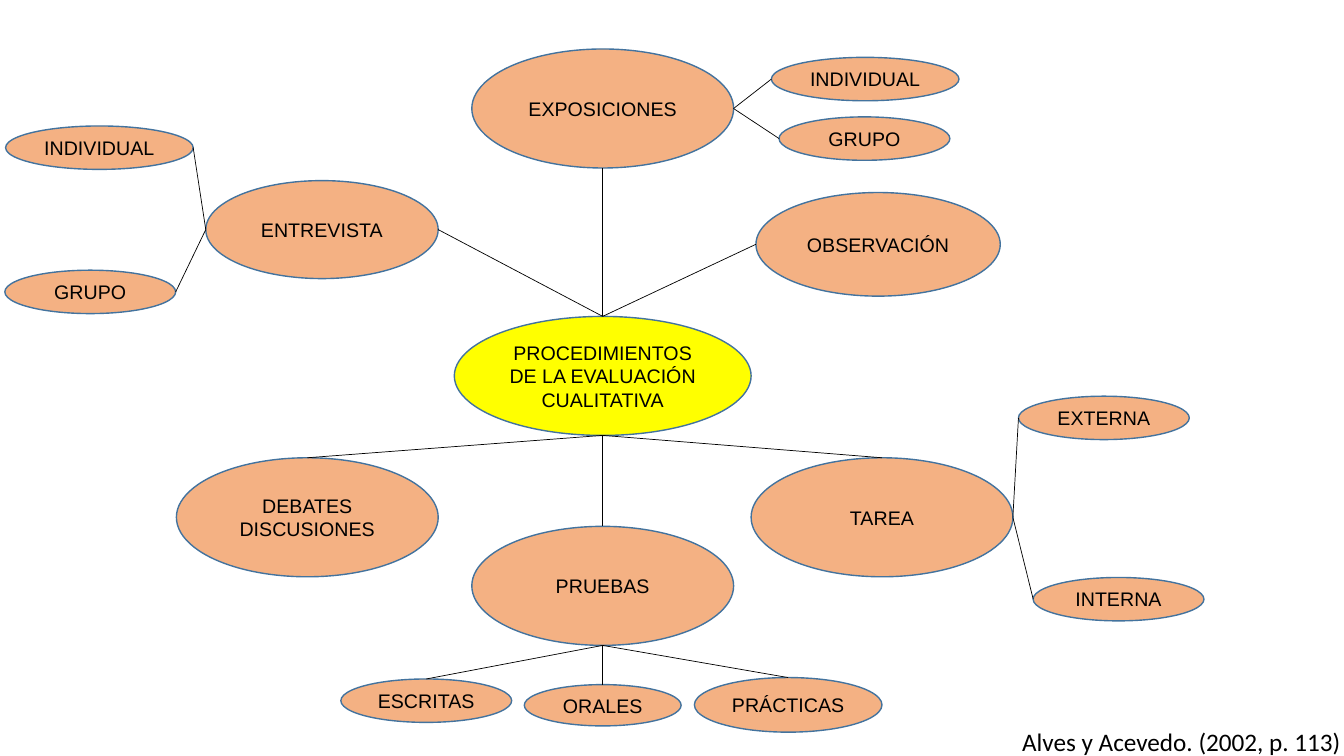
"""Concept map of the procedures of qualitative evaluation."""
from pptx import Presentation
from pptx.dml.color import RGBColor
from pptx.enum import shapes, text
from pptx.oxml import ns, xmlchemy
from pptx.util import Pt

ORANGE = RGBColor(0xF4, 0xB1, 0x83)
YELLOW = RGBColor(0xFF, 0xFF, 0x00)
BLUE = RGBColor(0x43, 0x73, 0x9E)
BLACK = RGBColor(0x00, 0x00, 0x00)

SIDES = {"top": (0.5, 0), "bottom": (0.5, 1), "left": (0, 0.5), "right": (1, 0.5)}
OPPOSITE = {"top": "bottom", "bottom": "top", "left": "right", "right": "left"}

CENTRE = ("PROCEDIMIENTOS DE LA EVALUACIÓN CUALITATIVA", 324.5, 226, 212, 85)

# label, left, top, width, height, side of the centre, own side, side of the leaves, leaves
BRANCHES = [
    (("ENTREVISTA", 147, 129, 166, 70), "top", "right", "left", [
        ("INDIVIDUAL", 4, 90, 134, 31),
        ("GRUPO", 3.5, 193, 122, 31)]),
    (("EXPOSICIONES", 337, 35, 187, 85), "top", "bottom", "right", [
        ("INDIVIDUAL", 551, 41, 134, 31),
        ("GRUPO", 556.5, 83.5, 122, 31)]),
    (("OBSERVACIÓN", 540, 137.5, 174.5, 74), "top", "left", "right", []),
    (("DEBATES\nDISCUSIONES", 126, 327, 187, 85), "bottom", "top", "left", []),
    (("PRUEBAS", 337, 376, 187, 85), "bottom", "top", "bottom", [
        ("ESCRITAS", 243.5, 485, 122, 31),
        ("ORALES", 374.5, 489, 112, 29.5),
        ("PRÁCTICAS", 496, 484, 134, 39)]),
    (("TAREA", 536.5, 327, 187, 85), "bottom", "top", "right", [
        ("EXTERNA", 727.5, 283, 122, 31),
        ("INTERNA", 738, 412.5, 122, 31)]),
]

presentation = Presentation()
presentation.slide_width, presentation.slide_height = Pt(960), Pt(540)
slide = presentation.slides.add_slide(presentation.slide_layouts[6])


def add_ellipse(node, colour):
    label, left, top, width, height = node
    shape = slide.shapes.add_shape(
        shapes.MSO_SHAPE.OVAL, Pt(left), Pt(top), Pt(width), Pt(height))
    shape.shadow.inherit = False
    shape.fill.solid()
    shape.fill.fore_color.rgb = colour
    shape.line.color.rgb = BLUE
    shape.line.width = Pt(1)
    shape.text_frame.text = label
    shape.text_frame.vertical_anchor = text.MSO_ANCHOR.MIDDLE
    for paragraph in shape.text_frame.paragraphs:
        paragraph.alignment = text.PP_ALIGN.CENTER
        font = paragraph.runs[0].font
        font.name, font.size, font.color.rgb = "Arial", Pt(14), BLACK
    return shape


def join(start, start_side, end, end_side):
    points = []
    for shape, side in ((start, start_side), (end, end_side)):
        across, down = SIDES[side]
        points += [int(shape.left + across * shape.width),
                   int(shape.top + down * shape.height)]
    connector = slide.shapes.add_connector(shapes.MSO_CONNECTOR.STRAIGHT, *points)
    connector.line.color.rgb = BLACK
    connector.line.width = Pt(0.5)
    connector._element.spPr.append(xmlchemy.OxmlElement("a:effectLst"))


centre = add_ellipse(CENTRE, YELLOW)
for node, centre_side, node_side, leaf_side, leaves in BRANCHES:
    branch = add_ellipse(node, ORANGE)
    join(centre, centre_side, branch, node_side)
    for leaf in leaves:
        join(branch, leaf_side, add_ellipse(leaf, ORANGE), OPPOSITE[leaf_side])

citation = slide.shapes.add_textbox(Pt(723), Pt(515.5), Pt(252.5), Pt(29))
citation.text_frame.word_wrap = False
citation.text_frame.auto_size = text.MSO_AUTO_SIZE.SHAPE_TO_FIT_TEXT
citation.text_frame.text = "Alves y Acevedo. (2002, p. 113)"
citation_font = citation.text_frame.paragraphs[0].runs[0].font
citation_font.name, citation_font.size, citation_font.color.rgb = "Calibri", Pt(18), BLACK

presentation.save("out.pptx")
